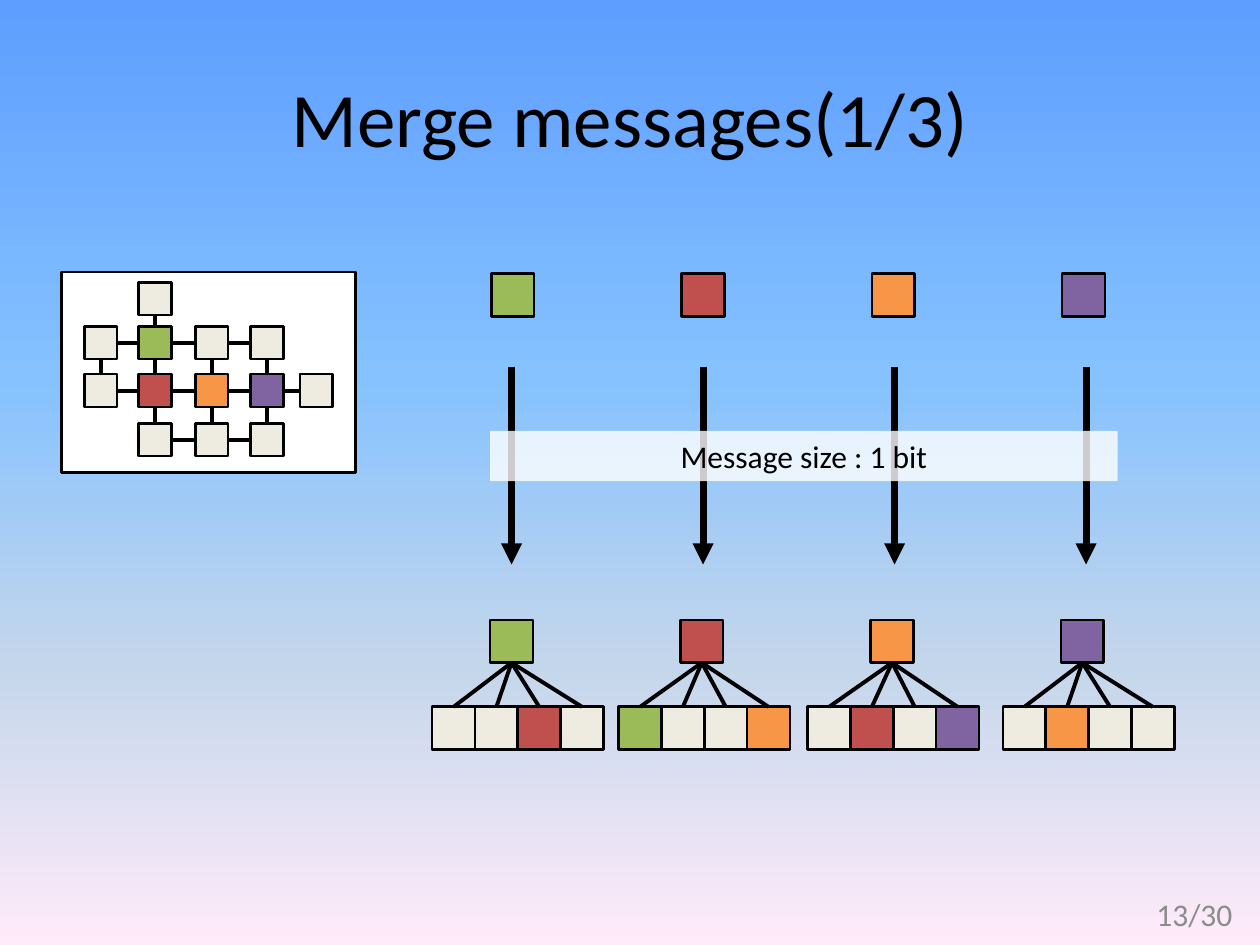
from lxml.etree import SubElement
from pptx import Presentation
from pptx.dml.color import RGBColor
from pptx.enum.shapes import MSO_CONNECTOR, MSO_SHAPE
from pptx.enum.text import MSO_ANCHOR, PP_ALIGN
from pptx.oxml.ns import qn
from pptx.util import Inches, Pt

TOP, LEFT, BOTTOM, RIGHT = range(4)
TINTS = {"w": "EEECE1", "g": "9BBB59", "r": "C0504D", "o": "F79646", "p": "8064A2"}


def color(code):
    return RGBColor.from_string(code)


def write(shape, text, size=18, ink="000000", align=PP_ALIGN.CENTER, font="Calibri"):
    frame = shape.text_frame
    frame.word_wrap = True
    frame.vertical_anchor = MSO_ANCHOR.MIDDLE
    para = frame.paragraphs[0]
    para.alignment = align
    run = para.add_run()
    run.text = text
    run.font.size = Pt(size)
    run.font.name = font
    run.font.color.rgb = color(ink)


class Board:
    ink = "000000"
    edge = 1.5
    link = 2.25

    def __init__(self, slide):
        self.slide = slide

    def shade(self, stops):
        fill = self.slide.background.fill
        fill.gradient()
        fill.gradient_angle = 270
        group = next(self.slide.element.iter(qn("a:gsLst")))
        for stop in list(group):
            group.remove(stop)
        for place, code in stops:
            stop = SubElement(group, qn("a:gs"), pos=str(place * 1000))
            SubElement(stop, qn("a:srgbClr"), val=code)

    def text(self, x, y, w, h, text, **style):
        box = self.slide.shapes.add_textbox(Inches(x), Inches(y), Inches(w), Inches(h))
        write(box, text, **style)

    def rect(self, x, y, w, h, code, lined=True):
        shape = self.slide.shapes.add_shape(
            MSO_SHAPE.RECTANGLE, Inches(x), Inches(y), Inches(w), Inches(h))
        shape.shadow.inherit = False
        shape.fill.solid()
        shape.fill.fore_color.rgb = color(code)
        if lined:
            shape.line.color.rgb = color(self.ink)
            shape.line.width = Pt(self.edge)
        else:
            shape.line.fill.background()
        return shape

    def band(self, x, y, w, h, text, alpha):
        shape = self.rect(x, y, w, h, "FFFFFF", lined=False)
        tint = shape.fill._xPr.find(qn("a:solidFill"))[0]
        SubElement(tint, qn("a:alpha"), val=str(alpha * 1000))
        write(shape, text)

    def line(self, x1, y1, x2, y2, width):
        wire = self.slide.shapes.add_connector(
            MSO_CONNECTOR.STRAIGHT, Inches(x1), Inches(y1), Inches(x2), Inches(y2))
        wire.line.color.rgb = color(self.ink)
        wire.line.width = Pt(width)
        SubElement(wire._element.spPr, qn("a:effectLst"))
        return wire

    def join(self, first, side, second, other):
        wire = self.line(0, 0, 0, 0, self.link)
        wire.begin_connect(first, side)
        wire.end_connect(second, other)

    def arrow(self, x, y1, y2):
        wire = self.line(x, y1, x, y2, 4)
        SubElement(wire.line._get_or_add_ln(), qn("a:tailEnd"), type="triangle")

    def mesh(self, cols, rows, marks, size):
        nodes = {}
        for r, marks_row in enumerate(marks):
            for c, mark in enumerate(marks_row):
                if mark != "-":
                    nodes[r, c] = self.rect(cols[c], rows[r], size, size, TINTS[mark])
        for (r, c), node in nodes.items():
            if (r, c + 1) in nodes:
                self.join(node, RIGHT, nodes[r, c + 1], LEFT)
            if (r + 1, c) in nodes:
                self.join(node, BOTTOM, nodes[r + 1, c], TOP)

    def tree(self, root, x, y, size, marks):
        for i, mark in enumerate(marks):
            leaf = self.rect(x + i * size, y, size, size, TINTS[mark])
            self.join(leaf, TOP, root, BOTTOM)


def main():
    deck = Presentation()
    deck.slide_width, deck.slide_height = Inches(10), Inches(7.5)
    board = Board(deck.slides.add_slide(deck.slide_layouts[6]))
    board.shade([(0, "5E9EFF"), (40, "85C2FF"), (70, "C4D6EB"), (100, "FFEBFA")])

    board.rect(0.49, 2.16, 2.33, 1.59, "FFFFFF")
    board.text(0.5, 0.3, 9, 1.25, "Merge messages(1/3)", size=44)
    board.mesh([0.67, 1.1, 1.55, 1.99, 2.38], [2.24, 2.59, 2.97, 3.36],
               ["-w---", "wgww-", "wropw", "-www-"], 0.26)

    size = 0.34
    trees = [("g", 3.43, "wwrw"), ("r", 4.91, "gwwo"),
             ("o", 6.41, "wrwp"), ("p", 7.96, "woww")]
    for i, (mark, left, leaves) in enumerate(trees):
        board.rect(3.9 + 1.51 * i, 2.17, size, size, TINTS[mark])
        board.arrow(4.06 + 1.52 * i, 2.91, 4.48)
        root = board.rect(3.89 + 1.51 * i, 4.92, size, size, TINTS[mark])
        board.tree(root, left, 5.61, size, leaves)

    board.band(3.89, 3.42, 4.98, 0.4, "Message size : 1 bit", 80)
    board.text(7.55, 7.05, 2.33, 0.4, "13/30", ink="8C8C8C", align=PP_ALIGN.RIGHT)
    deck.save("out.pptx")


if __name__ == "__main__":
    main()
